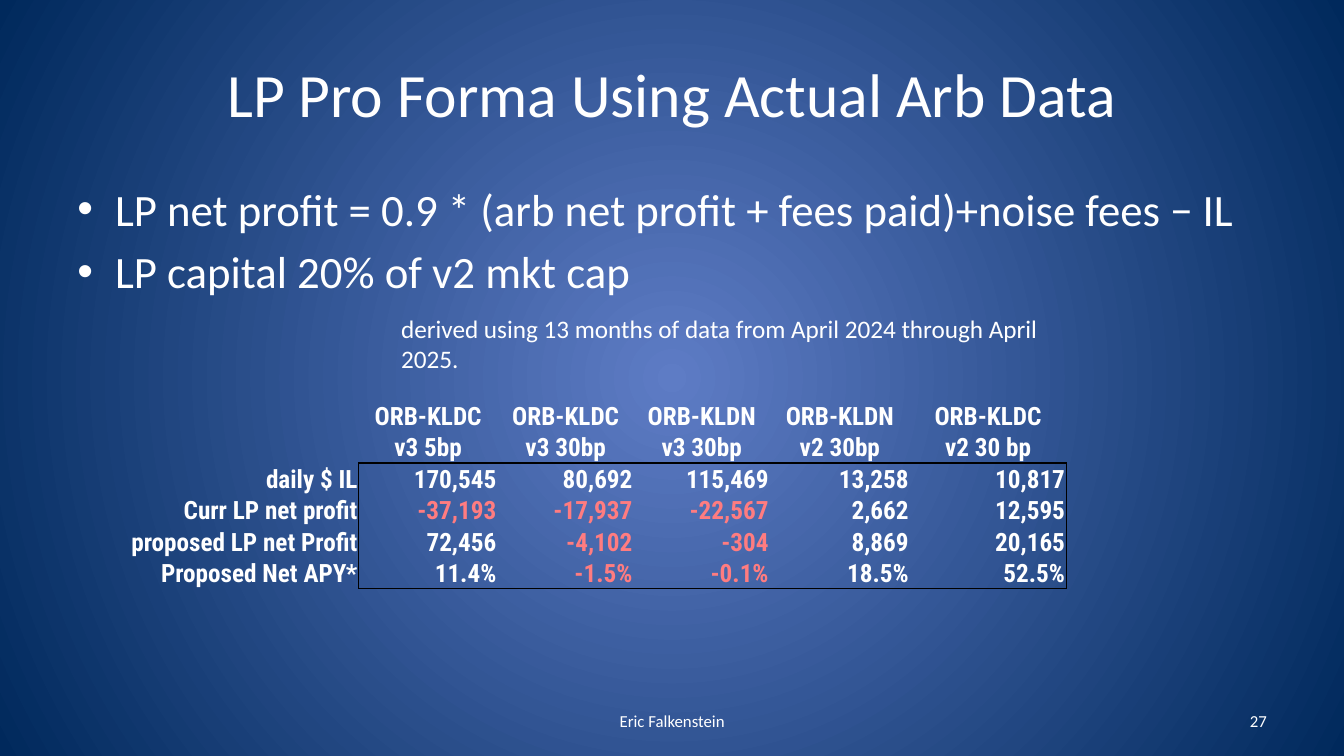
from pptx import Presentation
from pptx.dml.color import RGBColor
from pptx.enum.text import MSO_ANCHOR as Anchor, PP_ALIGN as Align
from pptx.oxml import parse_xml
from pptx.oxml.ns import nsdecls
from pptx.util import Cm, Pt

WHITE, RED, BLACK = "FFFFFF", "FF7C80", "000000"
NS = nsdecls("a")


def rgb(code):
    return RGBColor.from_string(code)


def write(frame, text, size=18, font="Calibri", color=WHITE, bold=False,
          align=Align.LEFT, anchor=Anchor.TOP, bullet=False):
    frame.word_wrap = True
    frame.vertical_anchor = anchor
    frame.text = text
    for par in frame.paragraphs:
        par.alignment = align
        par.font.size = Pt(size)
        for run in par.runs:
            run.font.size, run.font.name = Pt(size), font
            run.font.bold, run.font.color.rgb = bold, rgb(color)
        if bullet:
            par.space_before = Pt(6)
            prop = par._p.get_or_add_pPr()
            prop.set("marL", str(Cm(0.95)))
            prop.set("indent", str(-Cm(0.95)))
            for tag in ('buFont typeface="Arial"', 'buChar char="•"'):
                prop.insert_element_before(parse_xml(f"<a:{tag} {NS}/>"),
                                           "a:tabLst", "a:defRPr", "a:extLst")


deck = Presentation()
deck.slide_width, deck.slide_height = Cm(33.87), Cm(19.05)
slide = deck.slides.add_slide(deck.slide_layouts[6])

# Background: radial gradient from the centre
fill = slide.background.fill
fill.gradient()
for stop, code in zip(fill.gradient_stops, ("5E7CC5", "00295C")):
    stop.color.rgb = rgb(code)
grad = slide._element.xpath(".//a:gradFill")[0]
line = grad.xpath("a:lin")[0]
grad.replace(line, parse_xml(
    f'<a:path {NS} path="circle">'
    '<a:fillToRect l="50000" t="50000" r="50000" b="50000"/></a:path>'))

# Title, bullets, note and footer
mid = {"anchor": Anchor.MIDDLE}
texts = [
    ((1.7, 0.76, 30.48, 3.18), "LP Pro Forma Using Actual Arb Data",
     dict(mid, size=44, align=Align.CENTER)),
    ((1.7, 4.45, 30.48, 12.57),
     "LP net profit = 0.9 * (arb net profit + fees paid)+noise fees − IL\n"
     "LP capital 20% of v2 mkt cap", {"size": 32, "bullet": True}),
    ((9.86, 7.77, 16.84, 1.8),
     "derived using 13 months of data from April 2024 through April 2025.", {}),
    ((11.58, 17.65, 10.72, 1.02), "Eric Falkenstein",
     dict(mid, size=12, align=Align.CENTER)),
    ((24.28, 17.65, 7.9, 1.02), "27", dict(mid, size=12, align=Align.RIGHT)),
]
for place, text, style in texts:
    box = slide.shapes.add_textbox(*map(Cm, place))
    write(box.text_frame, text, **style)

# Table of pools
rows = [
    ["", "ORB-KLDC", "ORB-KLDC", "ORB-KLDN", "ORB-KLDN", "ORB-KLDC"],
    ["", "v3 5bp", "v3 30bp", "v3 30bp", "v2 30bp", "v2 30 bp"],
    ["daily $ IL", "170,545", "80,692", "115,469", "13,258", "10,817"],
    ["Curr LP net profit", "-37,193", "-17,937", "-22,567", "2,662", "12,595"],
    ["proposed LP net Profit", "72,456", "-4,102", "-304", "8,869", "20,165"],
    ["Proposed Net APY*", "11.4%", "-1.5%", "-0.1%", "18.5%", "52.5%"],
]
widths = [5.94, 3.5, 3.43, 3.43, 3.53, 3.94]
HEAD, SIDE = 2, 1  # header rows and label columns outside the frame
count = len(rows)
table = slide.shapes.add_table(count, len(widths), Cm(3.1), Cm(10.08),
                               Cm(sum(widths)), Cm(3.24)).table
table.first_row = table.horz_banding = False
for col, width in zip(table.columns, widths):
    col.width = Cm(width)

for r, row in enumerate(rows):
    table.rows[r].height = Cm(0.54)
    for c, text in enumerate(row):
        cell = table.cell(r, c)
        cell.margin_left = cell.margin_right = cell.margin_top = Cm(0.03)
        cell.margin_bottom = 0
        write(cell.text_frame, text, font="Roboto Condensed", bold=True,
              color=RED if text.startswith("-") else WHITE,
              align=Align.CENTER if r < HEAD else Align.RIGHT)
        cell.vertical_anchor = Anchor.BOTTOM
        cell.fill.background()
        # Black frame around the figures, no other rules
        tall, wide = (SIDE, len(widths)), (HEAD, count)
        edges = {"L": r >= HEAD and c in tall, "R": r >= HEAD and c + 1 in tall,
                 "T": c >= SIDE and r in wide, "B": c >= SIDE and r + 1 in wide}
        for i, (side, drawn) in enumerate(edges.items()):
            paint = (f'<a:solidFill><a:srgbClr val="{BLACK}"/></a:solidFill>'
                     if drawn else "<a:noFill/>")
            cell._tc.get_or_add_tcPr().insert(i, parse_xml(
                f'<a:ln{side} {NS} w="{Pt(1)}">{paint}</a:ln{side}>'))

deck.save("out.pptx")
